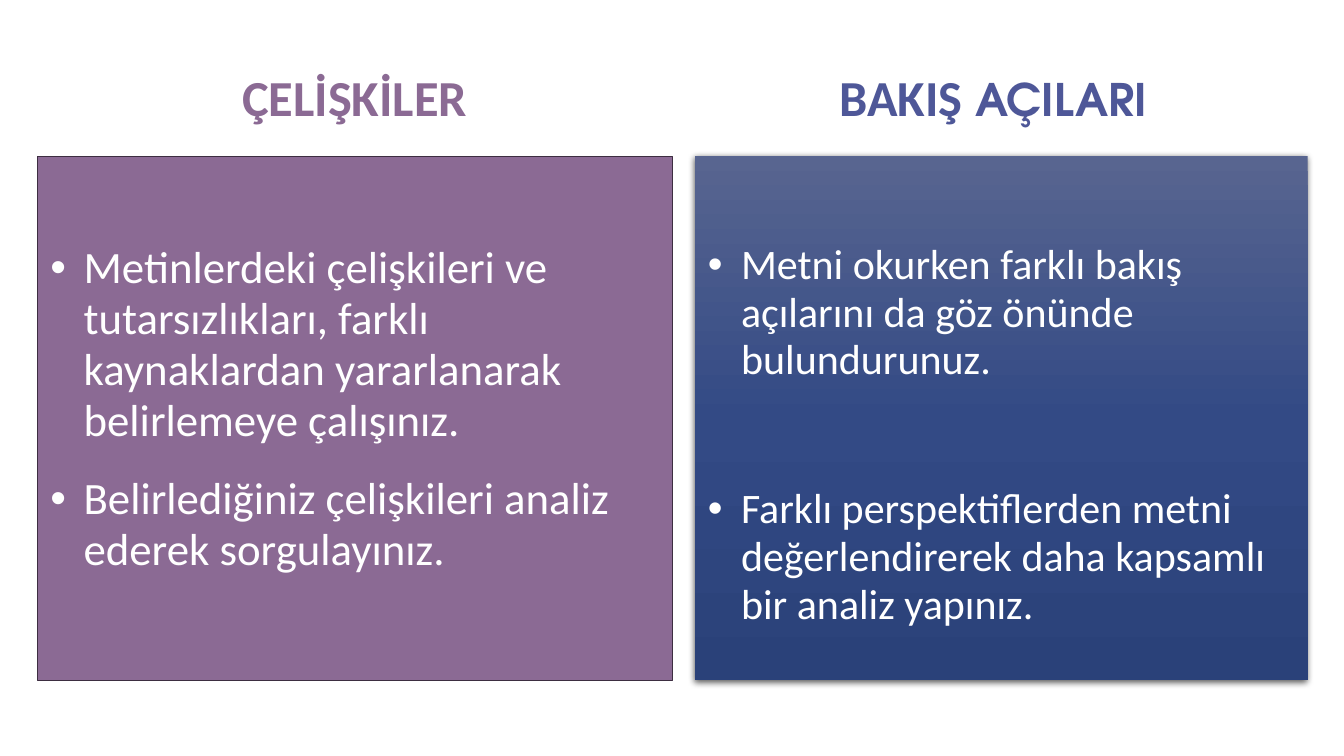
import copy
from dataclasses import dataclass

import pptx
import pptx.dml.color
import pptx.enum.shapes
import pptx.enum.text
import pptx.oxml
import pptx.oxml.ns
import pptx.util
from pptx.util import Inches, Pt


@dataclass(frozen=True)
class Theme:
    body_font: str = "Calibri"
    accent_font: str = "TeX Gyre Adventor"
    purple: str = "8B6A94"
    purple_edge: str = "3D2E41"
    blue: str = "4E5798"
    blue_stops: tuple = ((0, "586590"), (0.5, "334A85"), (1, "2A4179"))
    white: str = "FFFFFF"
    heading_size: int = 36
    heading_small: int = 32
    contradictions_size: int = 32
    viewpoints_size: int = 30
    line_spacing: float = 0.95


THEME = Theme()


def rgb(value):
    return pptx.dml.color.RGBColor.from_string(value)


def set_font(font, name, size, color, bold=False):
    font.name = name
    font.size = Pt(size)
    font.bold = bold
    font.color.rgb = rgb(color)


def prepare_frame(frame, anchor, top=0.07):
    frame.word_wrap = True
    frame.vertical_anchor = anchor
    frame.margin_left = frame.margin_right = Inches(0.13)
    frame.margin_top = Inches(top)
    frame.margin_bottom = Inches(0.07)


def add_heading(slide, left, width, color, parts):
    heading = slide.shapes.add_textbox(
        Inches(left), Inches(0.52), Inches(width), Inches(0.82))
    frame = heading.text_frame
    prepare_frame(frame, pptx.enum.text.MSO_ANCHOR.BOTTOM)
    line = frame.paragraphs[0]
    line.alignment = pptx.enum.text.PP_ALIGN.CENTER
    line.line_spacing = THEME.line_spacing
    for words, font_name, size in parts:
        run = line.add_run()
        run.text = words
        set_font(run.font, font_name, size, color, bold=True)


def add_bullet(paragraph):
    properties = paragraph._p.get_or_add_pPr()
    properties.set("marL", str(Inches(0.33)))
    properties.set("indent", str(-Inches(0.33)))
    namespaces = pptx.oxml.ns.nsdecls("a")
    properties.append(pptx.oxml.parse_xml(
        f'<a:buFont {namespaces} typeface="Arial"/>'))
    properties.append(pptx.oxml.parse_xml(
        f'<a:buChar {namespaces} char="•"/>'))


def add_panel(slide, left, width, size, top_margin, gap, points):
    panel = slide.shapes.add_shape(
        pptx.enum.shapes.MSO_SHAPE.RECTANGLE,
        Inches(left), Inches(1.55), Inches(width), Inches(5.2))
    panel.shadow.inherit = False
    frame = panel.text_frame
    prepare_frame(frame, pptx.enum.text.MSO_ANCHOR.TOP, top_margin)
    for index, point in enumerate(points):
        paragraph = frame.add_paragraph() if index else frame.paragraphs[0]
        paragraph.text = point
        paragraph.alignment = pptx.enum.text.PP_ALIGN.LEFT
        add_bullet(paragraph)
        paragraph.line_spacing = THEME.line_spacing
        if index:
            paragraph.space_before = Pt(gap)
        set_font(paragraph.font, THEME.body_font, size, THEME.white)
    return panel


def shade_downwards(panel, stops):
    panel.fill.gradient()
    panel.fill.gradient_angle = 270
    first_stop = panel.fill.gradient_stops[0]._gs
    first_stop.addnext(copy.deepcopy(first_stop))
    for stop, (position, color) in zip(panel.fill.gradient_stops, stops):
        stop.position = position
        stop.color.rgb = rgb(color)


def cast_shadow(panel):
    effects = panel._element.spPr.find(pptx.oxml.ns.qn("a:effectLst"))
    effects.append(pptx.oxml.parse_xml(
        f'<a:outerShdw {pptx.oxml.ns.nsdecls("a")} blurRad="{Pt(4.5)}" '
        f'dist="{Pt(1.5)}" dir="5400000" algn="ctr" rotWithShape="0">'
        '<a:srgbClr val="000000"><a:alpha val="63000"/></a:srgbClr>'
        '</a:outerShdw>'))


def main():
    deck = pptx.Presentation()
    deck.slide_width = Inches(13.33)
    deck.slide_height = Inches(7.5)
    slide = deck.slides.add_slide(deck.slide_layouts[6])

    add_heading(slide, 0.37, 6.3, THEME.purple, [
        ("ÇELİŞKİLER", THEME.body_font, THEME.heading_size)])
    contradictions = add_panel(
        slide, 0.37, 6.3, THEME.contradictions_size, 0.86, 18.7, [
            "Metinlerdeki çelişkileri ve tutarsızlıkları, farklı "
            "kaynaklardan yararlanarak belirlemeye çalışınız.",
            "Belirlediğiniz çelişkileri analiz ederek sorgulayınız."])
    contradictions.fill.solid()
    contradictions.fill.fore_color.rgb = rgb(THEME.purple)
    contradictions.line.color.rgb = rgb(THEME.purple_edge)
    contradictions.line.width = Pt(1)

    add_heading(slide, 6.89, 5.92, THEME.blue, [
        ("BAKIŞ", THEME.body_font, THEME.heading_size),
        (" AÇILARI", THEME.accent_font, THEME.heading_small)])
    viewpoints = add_panel(
        slide, 6.89, 6.08, THEME.viewpoints_size, 0.84, 72, [
            "Metni okurken farklı bakış açılarını da göz önünde "
            "bulundurunuz.",
            "Farklı perspektiflerden metni değerlendirerek daha "
            "kapsamlı bir analiz yapınız."])
    shade_downwards(viewpoints, THEME.blue_stops)
    viewpoints.line.fill.background()
    cast_shadow(viewpoints)

    deck.save("out.pptx")


if __name__ == "__main__":
    main()
